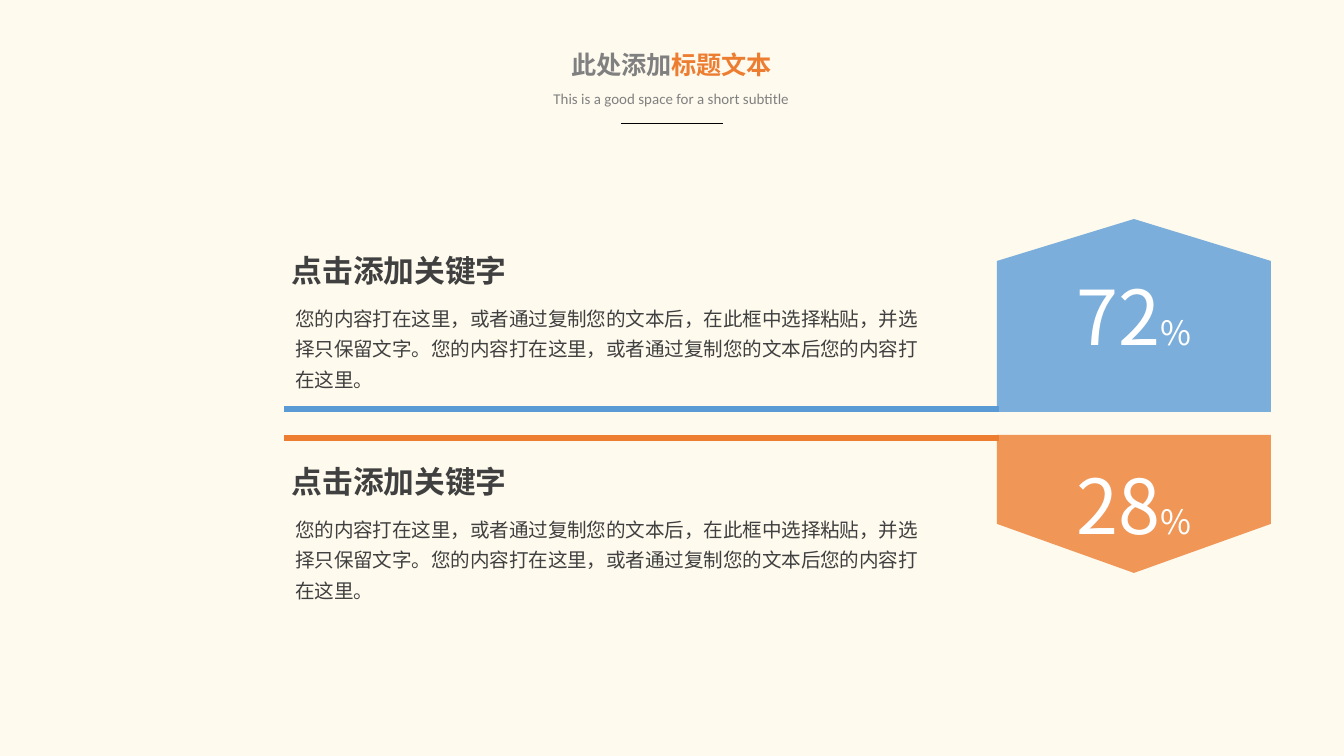
from dataclasses import dataclass

from lxml import etree
from pptx import Presentation
from pptx.dml.color import RGBColor
from pptx.enum.shapes import MSO_CONNECTOR
from pptx.enum.text import MSO_ANCHOR, PP_ALIGN
from pptx.oxml.ns import qn
from pptx.util import Emu, Pt

LEFT, CENTER = PP_ALIGN.LEFT, PP_ALIGN.CENTER
MIDDLE = MSO_ANCHOR.MIDDLE
STRAIGHT = MSO_CONNECTOR.STRAIGHT


@dataclass(frozen=True)
class Theme:
    background: str = "FEFAEE"
    grey: str = "808080"
    dark: str = "404040"
    black: str = "000000"
    white: str = "FFFFFF"
    blue: str = "5B9BD5"
    orange: str = "ED7D31"
    latin: str = "Calibri"
    chinese: str = "Noto Sans CJK SC"
    title: float = 13.5
    subtitle: float = 8
    keyword: float = 16.5
    body: float = 10.5
    number: float = 40.5
    percent: float = 18
    rule: float = 0.5
    bar: float = 3


THEME = Theme()
TITLE = (("此处添加", THEME.grey), ("标题文本", THEME.orange))
SUBTITLE = "This is a good space for a short subtitle"
KEYWORD = "点击添加关键字"
BODY = ("您的内容打在这里，或者通过复制您的文本后，在此框中选择粘贴，并选择只保留文字。"
        "您的内容打在这里，或者通过复制您的文本后您的内容打在这里。")
SECTIONS = (
    dict(number="72", color=THEME.blue, keyword_top=247, bar=409,
         base=412, shoulder=261, tip=219),
    dict(number="28", color=THEME.orange, keyword_top=458, bar=438,
         base=435, shoulder=524, tip=573),
)

WIDTH, HEIGHT = 1344, 756
TEXT_LEFT, BODY_OFFSET = 282, 46
BAR_LEFT, BAR_RIGHT = 284, 999
BADGE_LEFT, BADGE_RIGHT = 997, 1271
SCALE = 914400 * 10 / WIDTH


def px(length):
    return Emu(round(length * SCALE))


def rgb(color):
    return RGBColor.from_string(color)


def write(frame, runs, font, bold=False, align=LEFT, spacing=None):
    paragraph = frame.paragraphs[0]
    paragraph.alignment = align
    if spacing:
        paragraph.line_spacing = spacing
    for text, size, color in runs:
        run = paragraph.add_run()
        run.text = text
        run.font.size = Pt(size)
        run.font.name = font
        run.font.bold = bold
        run.font.color.rgb = rgb(color)
        east_asian = etree.Element(qn("a:ea"), typeface=THEME.chinese)
        run.font._element.find(qn("a:latin")).addnext(east_asian)


def set_margins(frame, side, end):
    frame.margin_left = frame.margin_right = px(side)
    frame.margin_top = frame.margin_bottom = px(end)


def add_text(slide, box, runs, font, wrap=True, **style):
    frame = slide.shapes.add_textbox(*map(px, box)).text_frame
    frame.word_wrap = wrap
    write(frame, runs, font, **style)
    return frame


def add_line(slide, start, end, y, color, width):
    line = slide.shapes.add_connector(STRAIGHT, px(start), px(y), px(end), px(y))
    line.line.color.rgb = rgb(color)
    line.line.width = Pt(width)
    etree.SubElement(line._element.spPr, qn("a:effectLst"))


def add_badge(slide, number, color, base, shoulder, tip):
    center = (BADGE_LEFT + BADGE_RIGHT) / 2
    outline = slide.shapes.build_freeform(BADGE_LEFT, base, scale=SCALE)
    outline.add_line_segments([(BADGE_LEFT, shoulder), (center, tip),
                               (BADGE_RIGHT, shoulder), (BADGE_RIGHT, base)])
    badge = outline.convert_to_shape()
    badge.shadow.inherit = False
    badge.line.fill.background()
    badge.fill.solid()
    badge.fill.fore_color.rgb = rgb(color)
    fill = badge._element.spPr.find(qn("a:solidFill"))
    etree.SubElement(fill[0], qn("a:alpha"), val="80000")
    frame = badge.text_frame
    set_margins(frame, 0, 0)
    frame.vertical_anchor = MIDDLE
    write(frame, [(number, THEME.number, THEME.white),
                  ("%", THEME.percent, THEME.white)], THEME.chinese, align=CENTER)


def add_section(slide, number, color, keyword_top, bar, **badge):
    add_badge(slide, number, color, **badge)
    add_line(slide, BAR_RIGHT, BAR_LEFT, bar, color, THEME.bar)
    keyword = add_text(slide, (TEXT_LEFT, keyword_top, 308, 47),
                       [(KEYWORD, THEME.keyword, THEME.dark)], THEME.chinese, bold=True)
    set_margins(keyword, 10, 5)
    add_text(slide, (TEXT_LEFT, keyword_top + BODY_OFFSET, 659, 106),
             [(BODY, THEME.body, THEME.dark)], THEME.chinese, spacing=1.3)


def main():
    deck = Presentation()
    deck.slide_width, deck.slide_height = px(WIDTH), px(HEIGHT)
    slide = deck.slides.add_slide(deck.slide_layouts[6])
    slide.background.fill.solid()
    slide.background.fill.fore_color.rgb = rgb(THEME.background)
    add_text(slide, (556, 43, 231, 44),
             [(text, THEME.title, color) for text, color in TITLE],
             THEME.latin, wrap=False, bold=True, align=CENTER)
    add_text(slide, (539, 83, 265, 32), [(SUBTITLE, THEME.subtitle, THEME.grey)],
             THEME.latin, wrap=False, align=CENTER)
    add_line(slide, 621, 723, 124, THEME.black, THEME.rule)
    for section in SECTIONS:
        add_section(slide, **section)
    deck.save("out.pptx")


if __name__ == "__main__":
    main()
